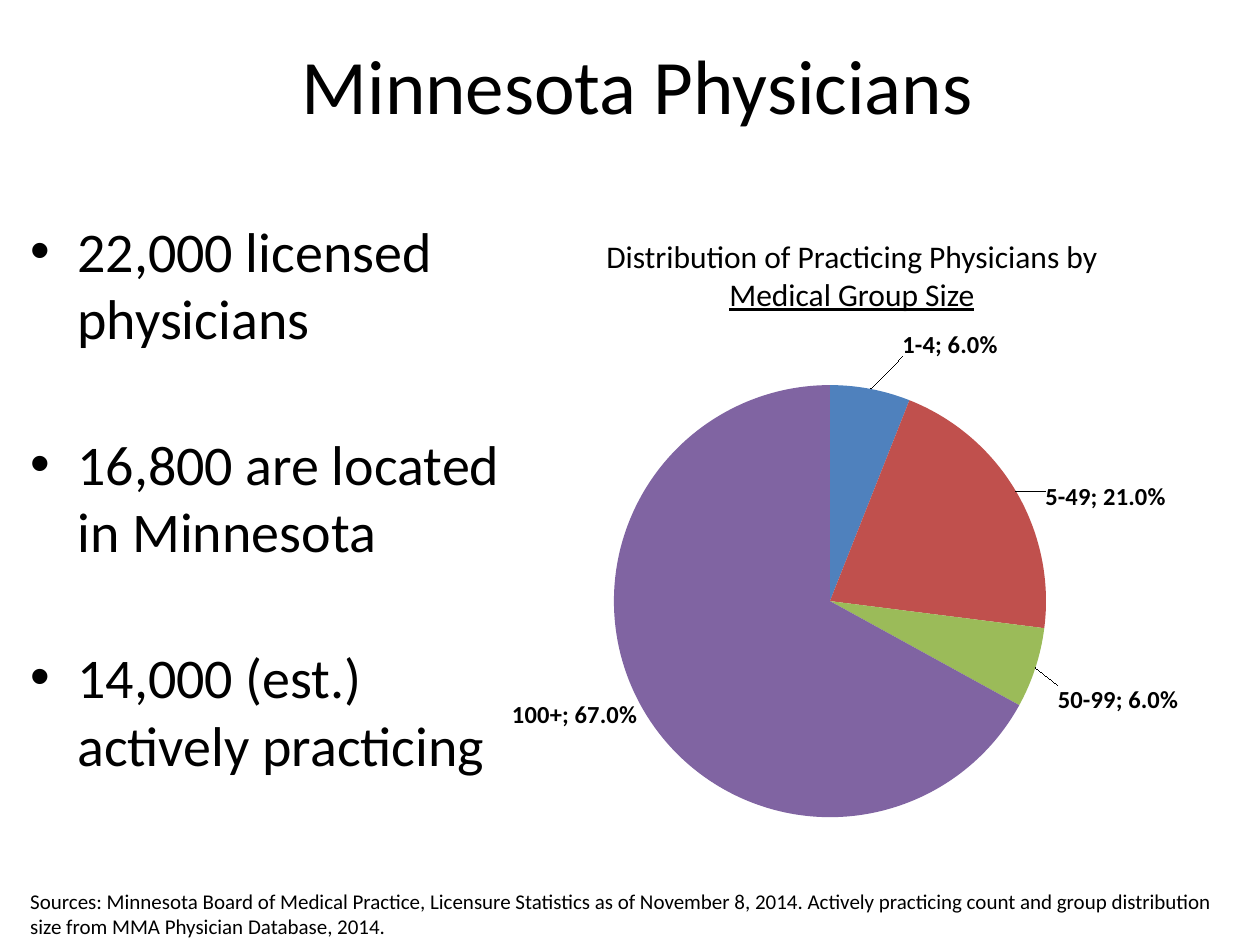
"""Build the Minnesota Physicians slide with bullets and a pie chart."""
from dataclasses import dataclass

from pptx import Presentation
from pptx.chart.data import CategoryChartData
from pptx.dml.color import RGBColor
from pptx.enum.chart import XL_CHART_TYPE, XL_LABEL_POSITION
from pptx.enum.text import MSO_ANCHOR, PP_ALIGN
from pptx.oxml import parse_xml
from pptx.oxml.ns import nsdecls
from pptx.util import Cm, Pt

PIE = XL_CHART_TYPE.PIE
OUTSIDE_END = XL_LABEL_POSITION.OUTSIDE_END
TOP, MIDDLE = MSO_ANCHOR.TOP, MSO_ANCHOR.MIDDLE
LEFT, CENTER = PP_ALIGN.LEFT, PP_ALIGN.CENTER


@dataclass(frozen=True)
class Theme:
    font: str = "Calibri"
    text: RGBColor = RGBColor(0, 0, 0)
    slices: tuple = ("4F81BD", "C0504D", "9BBB59", "8064A2")
    title: Pt = Pt(44)
    body: Pt = Pt(32)
    heading: Pt = Pt(18)
    label: Pt = Pt(14)
    source: Pt = Pt(12)


THEME = Theme()


def style_font(font, size):
    font.name = THEME.font
    font.size = size
    font.color.rgb = THEME.text


def add_text(slide, box, paragraphs, size, alignment=LEFT, anchor=TOP):
    shape = slide.shapes.add_textbox(*(Cm(length) for length in box))
    frame = shape.text_frame
    frame.word_wrap = True
    frame.vertical_anchor = anchor
    for index, texts in enumerate(paragraphs):
        paragraph = frame.paragraphs[0] if index == 0 else frame.add_paragraph()
        paragraph.alignment = alignment
        for text in texts:
            run = paragraph.add_run()
            run.text = text
            style_font(run.font, size)
    return frame


presentation = Presentation()
presentation.slide_width = Cm(25.4)
presentation.slide_height = Cm(19.05)
slide = presentation.slides.add_slide(presentation.slide_layouts[6])

add_text(slide, (1.42, 0.1, 22.86, 3.18), [["Minnesota Physicians"]],
         THEME.title, CENTER, MIDDLE)

facts = [["22,000 licensed physicians"], ["16,800 are located in Minnesota"],
         ["14,000 (est.) actively practicing"]]
body = add_text(slide, (0.36, 4.24, 10.01, 11.63), facts, THEME.body)
for index, paragraph in enumerate(body.paragraphs):
    properties = paragraph._p.get_or_add_pPr()
    properties.set("marL", str(Cm(0.95)))
    properties.set("indent", str(-Cm(0.95)))
    properties.append(parse_xml(f'<a:buFont {nsdecls("a")} typeface="Arial"/>'))
    properties.append(parse_xml(f'<a:buChar {nsdecls("a")} char="•"/>'))
    if index:
        paragraph.space_before = Pt(45)

heading = add_text(slide, (11.56, 4.65, 11.23, 1.8),
                   [["Distribution of Practicing Physicians by ", "Medical Group Size"]],
                   THEME.heading, CENTER)
heading.paragraphs[0].runs[1].font.underline = True

add_text(slide, (0.36, 17.78, 24.97, 1.27),
         [["Sources: Minnesota Board of Medical Practice, Licensure Statistics as of "
           "November 8, 2014. Actively practicing count and group distribution size "
           "from MMA Physician Database, 2014."]], THEME.source)

chart_data = CategoryChartData(number_format="0.0%")
chart_data.categories = ["1-4", "5-49", "50-99", "100+"]
chart_data.add_series("Series 1", [0.06, 0.21, 0.06, 0.67])
chart = slide.shapes.add_chart(PIE, Cm(9.09), Cm(6.65), Cm(15.44), Cm(10.13),
                               chart_data).chart
chart.has_legend = False
chart.has_title = False
style_font(chart.font, THEME.label)
plot = chart.plots[0]
plot.vary_by_categories = True
plot_area = chart.element.xpath(".//c:plotArea")[0]
for layout in plot_area.xpath("./c:layout"):
    plot_area.remove(layout)
plot_area.insert(0, parse_xml(
    f'<c:layout {nsdecls("c")}><c:manualLayout><c:layoutTarget val="inner"/>'
    '<c:xMode val="edge"/><c:yMode val="edge"/><c:x val="0.21"/><c:y val="0.11"/>'
    '<c:w val="0.57"/><c:h val="0.86"/></c:manualLayout></c:layout>'))

series = plot.series[0]
labels = series.data_labels
labels.show_value = True
labels.show_category_name = True
labels.number_format = "0.0%"
labels.number_format_is_linked = False
labels.position = OUTSIDE_END
style_font(labels.font, THEME.label)
labels.font.bold = True
label_list = chart.element.xpath(".//c:ser/c:dLbls")[0]
label_offsets = [(0.04, -0.05), (0.03, 0.05), (0.02, 0.03), (0, -0.03)]
for index, (color, (across, down)) in enumerate(zip(THEME.slices, label_offsets)):
    point = series.points[index]
    point.format.fill.solid()
    point.format.fill.fore_color.rgb = RGBColor.from_string(color)
    label_list.insert(index, parse_xml(
        f'<c:dLbl {nsdecls("c")}><c:idx val="{index}"/><c:layout><c:manualLayout>'
        f'<c:x val="{across}"/><c:y val="{down}"/></c:manualLayout></c:layout>'
        '<c:numFmt formatCode="0.0%" sourceLinked="0"/><c:dLblPos val="outEnd"/>'
        '<c:showLegendKey val="0"/><c:showVal val="1"/><c:showCatName val="1"/>'
        '<c:showSerName val="0"/><c:showPercent val="0"/><c:showBubbleSize val="0"/>'
        '<c:separator>; </c:separator></c:dLbl>'))
    style_font(point.data_label.font, THEME.label)
    point.data_label.font.bold = True

presentation.save("out.pptx")
